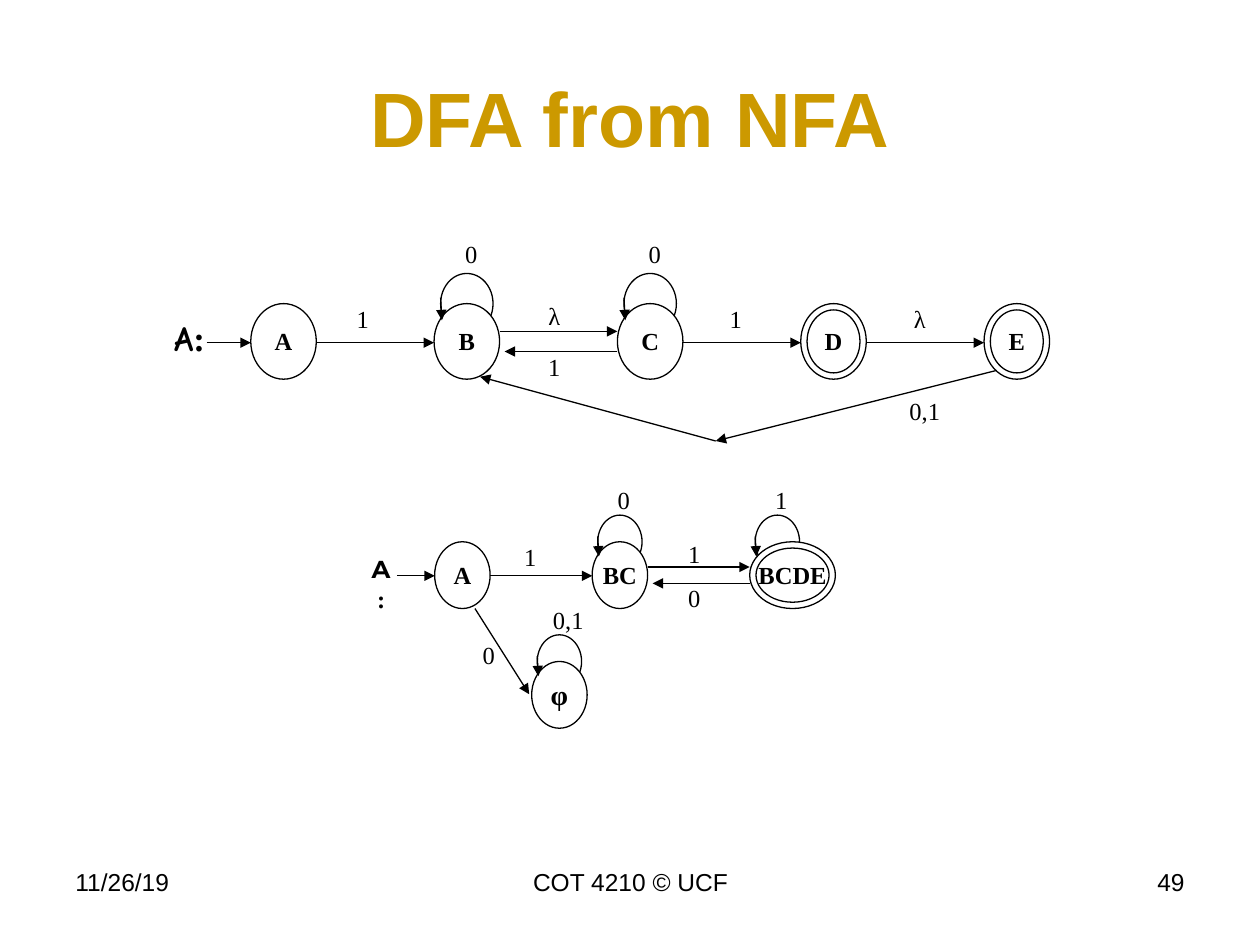
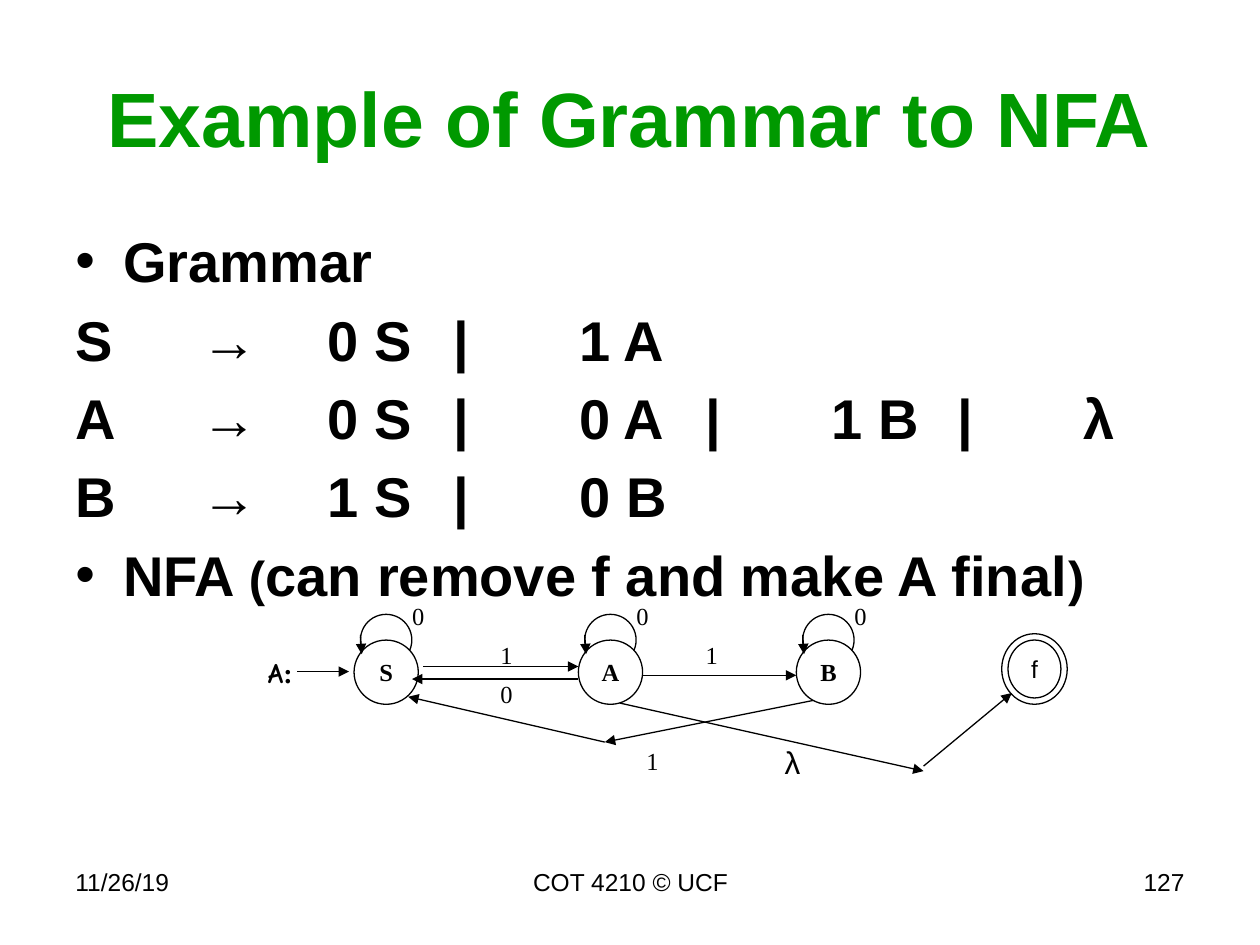
"""Build two slides of finite automata: a DFA from an NFA, and an NFA from a grammar."""
from collections import namedtuple

from lxml import etree
from pptx import Presentation
from pptx import util as u
from pptx.dml.color import RGBColor
from pptx.enum import shapes, text
from pptx.oxml import ns

BLACK = RGBColor(0x00, 0x00, 0x00)
WHITE = RGBColor(0xFF, 0xFF, 0xFF)
GOLD = RGBColor(0xCC, 0x99, 0x00)
GREEN = RGBColor(0x00, 0x99, 0x00)
SANS, SERIF, COMIC, GEOMETRIC = "Arial", "Times New Roman", "Comic Neue", "Montserrat"
LEFT, CENTER, RIGHT = text.PP_ALIGN.LEFT, text.PP_ALIGN.CENTER, text.PP_ALIGN.RIGHT
TOP, MIDDLE = text.MSO_ANCHOR.TOP, text.MSO_ANCHOR.MIDDLE

Run = namedtuple("Run", "words font size bold color", defaults=(SANS, 14, False, BLACK))
State = namedtuple("State", "name left top size loop final", defaults=(None, False))
Diagram = namedtuple("Diagram", "slide unit loop_label states arrows labels start")

presentation = Presentation()
presentation.slide_width, presentation.slide_height = u.Inches(10), u.Inches(7.5)
MARGIN = 0.5
CONTENT = 10 - 2 * MARGIN


def add_text(slide, box, paragraphs, align=LEFT, anchor=TOP, inset=0.1):
    shape = slide.shapes.add_textbox(*map(u.Inches, box))
    frame = shape.text_frame
    frame.word_wrap = True
    frame.vertical_anchor = anchor
    frame.margin_left = frame.margin_right = u.Inches(inset)
    frame.margin_top = frame.margin_bottom = u.Inches(inset / 2)
    for index, runs in enumerate(paragraphs):
        paragraph = frame.add_paragraph() if index else frame.paragraphs[0]
        paragraph.alignment = align
        for item in runs:
            run = paragraph.add_run()
            run.text = item.words
            run.font.name, run.font.size, run.font.bold = item.font, u.Pt(item.size), item.bold
            run.font.color.rgb = item.color
    return frame


def add_arrow(slide, start_x, start_y, end_x, end_y):
    ends = map(u.Inches, (start_x, start_y, end_x, end_y))
    connector = slide.shapes.add_connector(shapes.MSO_CONNECTOR.STRAIGHT, *ends)
    connector.line.color.rgb = BLACK
    connector.line.width = u.Pt(0.75)
    line = connector.line._get_or_add_ln()
    etree.SubElement(line, ns.qn("a:tailEnd"), type="triangle")
    etree.SubElement(connector._element.spPr, ns.qn("a:effectLst"))


slides = []
for title, color, number in (("DFA from NFA", GOLD, "49"),
                             ("Example of Grammar to NFA", GREEN, "127")):
    slide = presentation.slides.add_slide(presentation.slide_layouts[6])
    slides.append(slide)
    add_text(slide, (MARGIN, 0.3, CONTENT, 1.25),
             [[Run(title, SANS, 44, True, color)]], CENTER, MIDDLE)
    for words, left, width, align in (("11/26/19", MARGIN, 2.33, LEFT),
                                      ("COT 4210 © UCF", 3.42, 3.17, CENTER),
                                      (number, 7.17, 2.33, RIGHT)):
        add_text(slide, (left, 6.83, width, 0.52), [[Run(words)]], align)
conversion, grammar = slides

rules = [
    [("Grammar", 32)],
    [("S\t→\t0 S\t|\t1 A", 32)],
    [("A\t→\t0 S\t|\t0 A\t|\t1 B\t|\tλ", 32)],
    [("B\t→\t1 S\t|\t0 B", 32)],
    [("NFA ", 32), ("(", 28), ("can remove f and make A final", 32), (")", 28)],
]
body = add_text(grammar, (MARGIN, 1.75, CONTENT, 4.83),
                [[Run(words, SANS, size, True) for words, size in runs] for runs in rules])
for paragraph in body.paragraphs:
    paragraph.space_before = u.Pt(6.4)
    paragraph._p.get_or_add_pPr().set("defTabSz", str(u.Inches(1)))
for paragraph in (body.paragraphs[0], body.paragraphs[-1]):
    properties = paragraph._p.get_or_add_pPr()
    properties.set("marL", str(u.Inches(0.38)))
    properties.set("indent", str(-u.Inches(0.38)))
    etree.SubElement(properties, ns.qn("a:buFont"), typeface=SANS)
    etree.SubElement(properties, ns.qn("a:buChar"), char="•")

nfa_unit, dfa_unit, grammar_unit = (0.52, 0.6), (0.44, 0.53), (0.51, 0.51)
a, b, c, d, e = (1.99 + 5.82 * column / 4 for column in range(5))
nfa_row, nfa_axis, nfa_width = 2.41, 2.72, nfa_unit[0]
dfa_a, dfa_bc, dfa_bcde = 3.45, 4.7, 5.95
dfa_row, dfa_axis, dfa_width = 4.3, 4.57, dfa_unit[0]
s, grammar_a, grammar_b = 2.81, 4.59, 6.32
grammar_row, grammar_width = 5.08, grammar_unit[0]

diagrams = [
    Diagram(
        conversion, nfa_unit, (0.57, -0.85),
        [State("A", a, nfa_row, nfa_unit),
         State("B", b, nfa_row, nfa_unit, "0"),
         State("C", c, nfa_row, nfa_unit, "0"),
         State("D", d, nfa_row, nfa_unit, None, True),
         State("E", e, nfa_row, nfa_unit, None, True)],
        [(1.64, nfa_axis, a, nfa_axis),
         (a + nfa_width, nfa_axis, b, nfa_axis),
         (b + nfa_width, 2.63, c, 2.63),
         (c, 2.79, b + nfa_width + 0.04, 2.79),
         (c + nfa_width, nfa_axis, d, nfa_axis),
         (d + nfa_width, nfa_axis, e, nfa_axis),
         (7.91, 2.94, 5.68, 3.5),
         (5.68, 3.5, 3.81, 2.99)],
        [("1", 2.88, 2.41), ("λ", 4.4, 2.39), ("1", 4.4, 2.79),
         ("1", 5.84, 2.41), ("λ", 7.3, 2.41), ("0,1", 7.34, 3.14)],
        (COMIC, 20, (1.27, 2.46, 0.47, 0.38))),
    Diagram(
        conversion, dfa_unit, (0.57, -0.85),
        [State("A", dfa_a, dfa_row, dfa_unit),
         State("BC", dfa_bc, dfa_row, dfa_unit, "0"),
         State("BCDE", dfa_bcde, dfa_row, (0.68, 0.53), "1", True),
         State("φ", 4.22, 5.25, dfa_unit, "0,1")],
        [(3.15, dfa_axis, dfa_a, dfa_axis),
         (dfa_a + dfa_width, dfa_axis, dfa_bc, dfa_axis),
         (dfa_bc + dfa_width, 4.5, dfa_bcde, 4.5),
         (dfa_bcde, 4.63, dfa_bc + dfa_width + 0.04, 4.63),
         (3.77, 4.83, 4.2, 5.51)],
        [("1", 4.21, 4.3), ("1", 5.51, 4.28), ("0", 5.51, 4.63), ("0", 3.88, 5.08)],
        (GEOMETRIC, 14, (2.82, 4.35, 0.41, 0.34))),
    Diagram(
        grammar, grammar_unit, (1, -0.6),
        [State("S", s, grammar_row, grammar_unit, "0"),
         State("A", grammar_a, grammar_row, grammar_unit, "0"),
         State("B", grammar_b, grammar_row, grammar_unit, "0"),
         State("f", 7.95, 5.03, (0.52, 0.56), None, True)],
        [(2.36, 5.33, 2.77, 5.33),
         (3.36, 5.29, grammar_a, 5.29),
         (grammar_a, 5.39, 3.27, 5.39),
         (grammar_a + grammar_width, 5.36, grammar_b, 5.36),
         (6.45, 5.56, 4.8, 5.89),
         (4.8, 5.89, 3.24, 5.53),
         (4.92, 5.58, 7.33, 6.12),
         (7.33, 6.08, 8.03, 5.5)],
        [("1", 4.02, 5.08), ("0", 4.02, 5.39), ("1", 5.65, 5.08), ("1", 5.18, 5.92)],
        (COMIC, 16, (1.99, 5.15, 0.47, 0.32))),
]
state_fonts = {"φ": (SERIF, 16, True), "f": (SANS, 14, False)}
RING = 0.05
LABEL_WIDTH, LABEL_HEIGHT = 0.4, 0.3

for diagram in diagrams:
    slide = diagram.slide
    unit_width, unit_height = diagram.unit
    arrows, labels = list(diagram.arrows), list(diagram.labels)
    for state in diagram.states:
        left, top, (width, height) = state.left, state.top, state.size
        ovals = [(left, top, width, height)]
        if state.loop:
            ovals.insert(0, (left + 0.1 * unit_width, top - 0.4 * unit_height,
                             0.8 * unit_width, 0.8 * unit_height))
            arrows.append((left + 0.1 * unit_width, top - 0.08 * unit_height,
                           left + 0.12 * unit_width, top + 0.22 * unit_height))
            across, down = diagram.loop_label
            shift = 0.02 * (len(state.loop) - 1)
            labels.append((state.loop, left + across * unit_width + shift,
                           top + down * unit_height))
        if state.final:
            ovals.append((left + RING, top + RING, width - 2 * RING, height - 2 * RING))
        for oval in ovals:
            shape = slide.shapes.add_shape(shapes.MSO_SHAPE.OVAL, *map(u.Inches, oval))
            shape.shadow.inherit = False
            shape.fill.solid()
            shape.fill.fore_color.rgb = WHITE
            shape.line.color.rgb = BLACK
            shape.line.width = u.Pt(0.75)
        style = state_fonts.get(state.name, (SERIF, 14, True))
        add_text(slide, (left + RING, top + 0.18 * height, width - 2 * RING, 0.63 * height),
                 [[Run(state.name, *style)]], CENTER, MIDDLE, 0)
    for arrow in arrows:
        add_arrow(slide, *arrow)
    for words, middle, top in labels:
        add_text(slide, (middle - LABEL_WIDTH / 2, top, LABEL_WIDTH, LABEL_HEIGHT),
                 [[Run(words, SERIF)]], CENTER, TOP, 0)
    font, size, box = diagram.start
    add_text(slide, box, [[Run("A", font, size, True), Run(":", SERIF, size, True)]], CENTER)

add_text(grammar, (6.13, 5.85, LABEL_WIDTH, 0.4), [[Run("λ", SANS, 18)]])
presentation.save("out.pptx")
